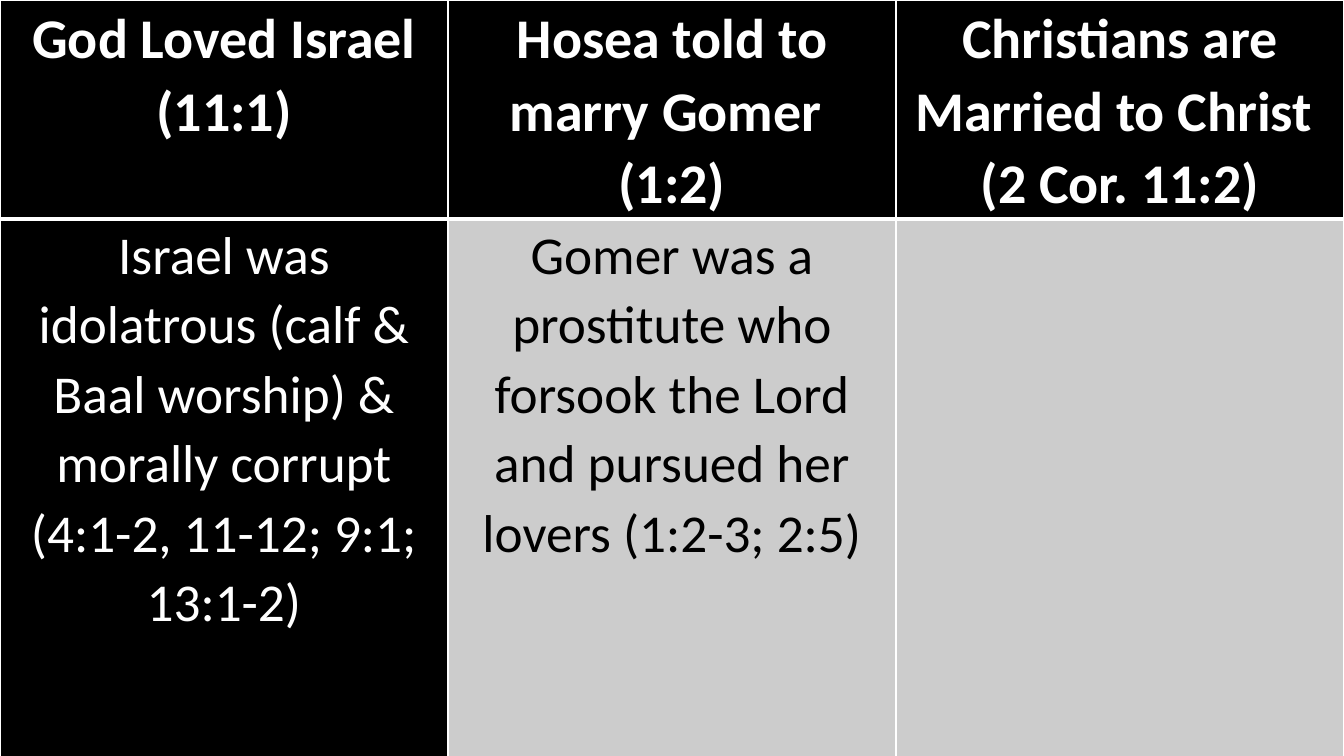
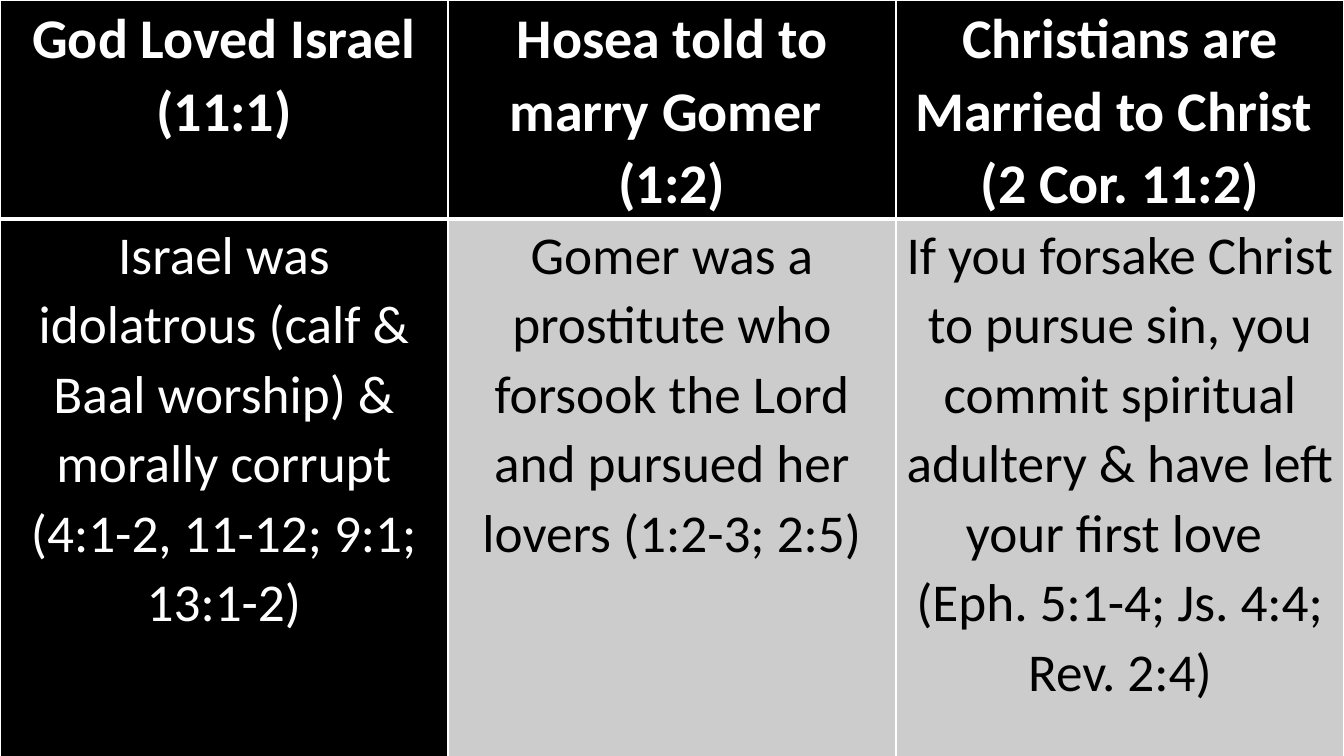
from lxml import etree
from pptx import Presentation
from pptx.dml.color import RGBColor
from pptx.enum import text
from pptx.oxml import ns
from pptx.util import Inches, Pt

HUES = {"black": "000000", "white": "FFFFFF", "gray": "CCCCCC"}
FONT = "Calibri"
WIDTH, HEIGHT = 13.33, 7.5
ROWS = (2.12, 5.38)
THIN, THICK = 1, 3

HEADS = (
    ["God Loved Israel (11:1)"],
    ["Hosea told to marry Gomer ", "(1:2)"],
    ["Christians are Married to Christ ", "(2 Cor. 11:2)"],
)
ISRAEL = ["Israel was idolatrous (calf & Baal worship) & morally corrupt "
          "(4:1-2, 11-12; 9:1; 13:1-2)"]
GOMER = ["Gomer was a prostitute who forsook the Lord and pursued her "
         "lovers (1:2-3; 2:5)"]
CHURCH = ["If you forsake Christ to pursue sin, you commit spiritual "
          "adultery & have left your first love ",
          "(Eph. 5:1-4; Js. 4:4; Rev. 2:4)"]


def color(name):
    return RGBColor.from_string(HUES[name])


def edge(cell, side, width):
    """Draw one white border; call before the cell is filled."""
    props = cell._tc.get_or_add_tcPr()
    line = etree.SubElement(props, ns.qn("a:ln" + side), w=str(Pt(width)))
    fill = etree.SubElement(line, ns.qn("a:solidFill"))
    etree.SubElement(fill, ns.qn("a:srgbClr"), val=HUES["white"])


def style(cell, back, top, bottom):
    cell.margin_left = cell.margin_right = Inches(0.07)
    cell.margin_top = cell.margin_bottom = 0
    for side, width in zip("LRTB", (THIN, THIN, top, bottom)):
        edge(cell, side, width)
    cell.fill.solid()
    cell.fill.fore_color.rgb = color(back)


def write(cell, lines, size, ink, bold):
    frame = cell.text_frame
    frame.text = "\n".join(lines)
    for para in frame.paragraphs:
        para.alignment = text.PP_ALIGN.CENTER
        para.line_spacing = 1.07
        font = para.font
        font.name, font.size, font.bold = FONT, Pt(size), bold
        font.color.rgb = color(ink)


def add_grid(slide, bodies):
    count = len(HEADS)
    grid = slide.shapes.add_table(len(ROWS), count, 0, 0, Inches(WIDTH),
                                  Inches(sum(ROWS))).table
    for row, height in zip(grid.rows, ROWS):
        row.height = Inches(height)
    for col, (head, body) in enumerate(zip(HEADS, bodies)):
        grid.columns[col].width = Inches(WIDTH / count)
        top, low = grid.cell(0, col), grid.cell(1, col)
        style(top, "black", THIN, THICK)
        write(top, head, 40, "white", True)
        back, ink = ("gray", "black") if col else ("black", "white")
        style(low, back, THICK, THIN)
        write(low, body, 38, ink, False)


def add_slide(deck, bodies):
    slide = deck.slides.add_slide(deck.slide_layouts[6])
    slide.background.fill.solid()
    slide.background.fill.fore_color.rgb = color("black")
    add_grid(slide, bodies)


def main():
    deck = Presentation()
    deck.slide_width, deck.slide_height = Inches(WIDTH), Inches(HEIGHT)
    for church in ([], CHURCH):
        add_slide(deck, (ISRAEL, GOMER, church))
    deck.save("out.pptx")


if __name__ == "__main__":
    main()
